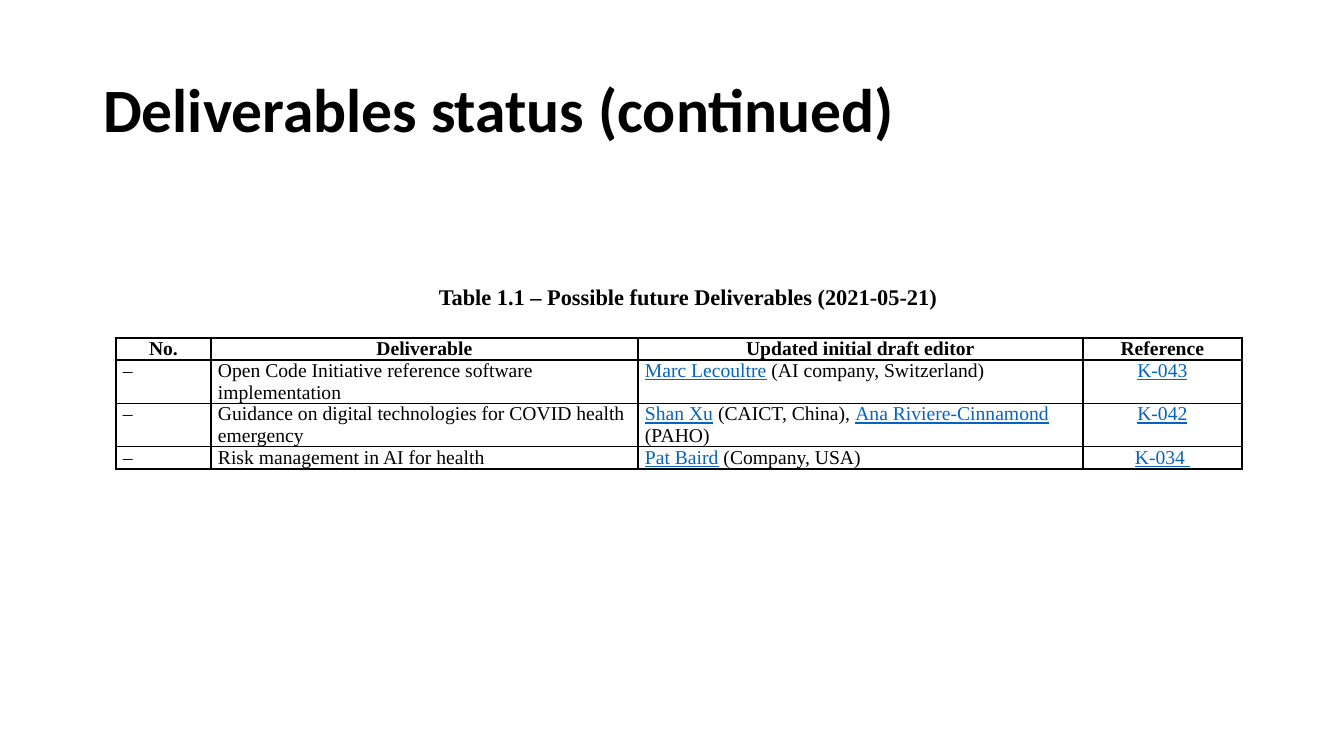
from lxml.etree import SubElement
from pptx import Presentation
from pptx.dml.color import RGBColor
from pptx.enum.text import MSO_ANCHOR, MSO_AUTO_SIZE, PP_ALIGN
from pptx.oxml.ns import qn
from pptx.util import Pt

EMU_PER_PX = 914400 / 100.8
BLACK = RGBColor(0x00, 0x00, 0x00)
LINK_BLUE = RGBColor(0x05, 0x63, 0xC1)
SERIF = "Times New Roman"

COLUMN_WIDTHS = [95, 427, 445, 159]
ROW_HEIGHTS = [22, 43, 43, 22]
CENTERED_COLUMN = 3

HEADINGS = ["No.", "Deliverable", "Updated initial draft editor", "Reference"]
DELIVERABLES = [
    ("Open Code Initiative reference software implementation",
     [("Marc Lecoultre", True), (" (AI company, Switzerland)", False)],
     "K-043"),
    ("Guidance on digital technologies for COVID health emergency",
     [("Shan Xu", True), (" (CAICT, China), ", False),
      ("Ana Riviere-Cinnamond", True), (" (PAHO)", False)],
     "K-042"),
    ("Risk management in AI for health",
     [("Pat Baird", True), (" (Company, USA)", False)],
     "K-034 "),
]


def px(length):
    return round(length * EMU_PER_PX)


def place(shape, left, top, width, height):
    shape.left, shape.top = px(left), px(top)
    shape.width, shape.height = px(width), px(height)


def style_font(font, name, size, color=BLACK, bold=False):
    font.name = name
    font.size = Pt(size)
    font.color.rgb = color
    font.bold = bold


def set_title(slide):
    title = slide.shapes.title
    place(title, 93, 40, 1159, 146)
    frame = title.text_frame
    frame.text = "Deliverables status (continued)"
    frame.auto_size = MSO_AUTO_SIZE.NONE
    frame.vertical_anchor = MSO_ANCHOR.MIDDLE
    heading = frame.paragraphs[0]
    heading.alignment = PP_ALIGN.LEFT
    heading.line_spacing = 0.9
    style_font(heading.runs[0].font, "Calibri", 44, bold=True)


def add_caption(slide):
    caption = slide.shapes.add_textbox(px(426), px(278), px(524), px(37))
    frame = caption.text_frame
    frame.word_wrap = False
    frame.text = "Table 1.1 – Possible future Deliverables (2021-05-21)"
    line = frame.paragraphs[0]
    line.alignment = PP_ALIGN.CENTER
    line.space_after = Pt(6)
    style_font(line.runs[0].font, SERIF, 16, bold=True)


def draw_borders(cell, weights):
    properties = cell._tc.get_or_add_tcPr()
    for side, weight in zip(("lnL", "lnR", "lnT", "lnB"), weights):
        border = SubElement(properties, qn(f"a:{side}"), w=str(Pt(weight)))
        fill = SubElement(border, qn("a:solidFill"))
        SubElement(fill, qn("a:srgbClr"), val=str(BLACK))


def fill_cell(cell, pieces, centered, bold):
    cell.margin_left = cell.margin_right = px(7)
    cell.margin_top = cell.margin_bottom = 0
    cell.fill.background()
    paragraph = cell.text_frame.paragraphs[0]
    paragraph.alignment = PP_ALIGN.CENTER if centered else PP_ALIGN.LEFT
    for text, linked in pieces:
        run = paragraph.add_run()
        run.text = text
        style_font(run.font, SERIF, 14, LINK_BLUE if linked else BLACK, bold)
        run.font.underline = linked


def add_deliverables_table(slide):
    rows = [[[(heading, False)] for heading in HEADINGS]]
    for deliverable, editors, reference in DELIVERABLES:
        rows.append([[("–", False)], [(deliverable, False)], editors, [(reference, True)]])

    table = slide.shapes.add_table(
        len(ROW_HEIGHTS), len(COLUMN_WIDTHS), px(116), px(338),
        px(sum(COLUMN_WIDTHS)), px(sum(ROW_HEIGHTS))).table
    table.first_row = table.horz_banding = False
    for column, width in zip(table.columns, COLUMN_WIDTHS):
        column.width = px(width)
    for row, height in zip(table.rows, ROW_HEIGHTS):
        row.height = px(height)

    last_row, last_column = len(rows) - 1, len(HEADINGS) - 1
    for r, row in enumerate(rows):
        for c, pieces in enumerate(row):
            cell = table.cell(r, c)
            thick = (c == 0, c == last_column, r == 0, r == last_row)
            draw_borders(cell, [1.5 if outer else 1 for outer in thick])
            fill_cell(cell, pieces, r == 0 or c == CENTERED_COLUMN, r == 0)


def main():
    deck = Presentation()
    deck.slide_width, deck.slide_height = px(1344), px(756)
    slide = deck.slides.add_slide(deck.slide_layouts[5])
    add_deliverables_table(slide)
    add_caption(slide)
    set_title(slide)
    deck.save("out.pptx")


if __name__ == "__main__":
    main()
